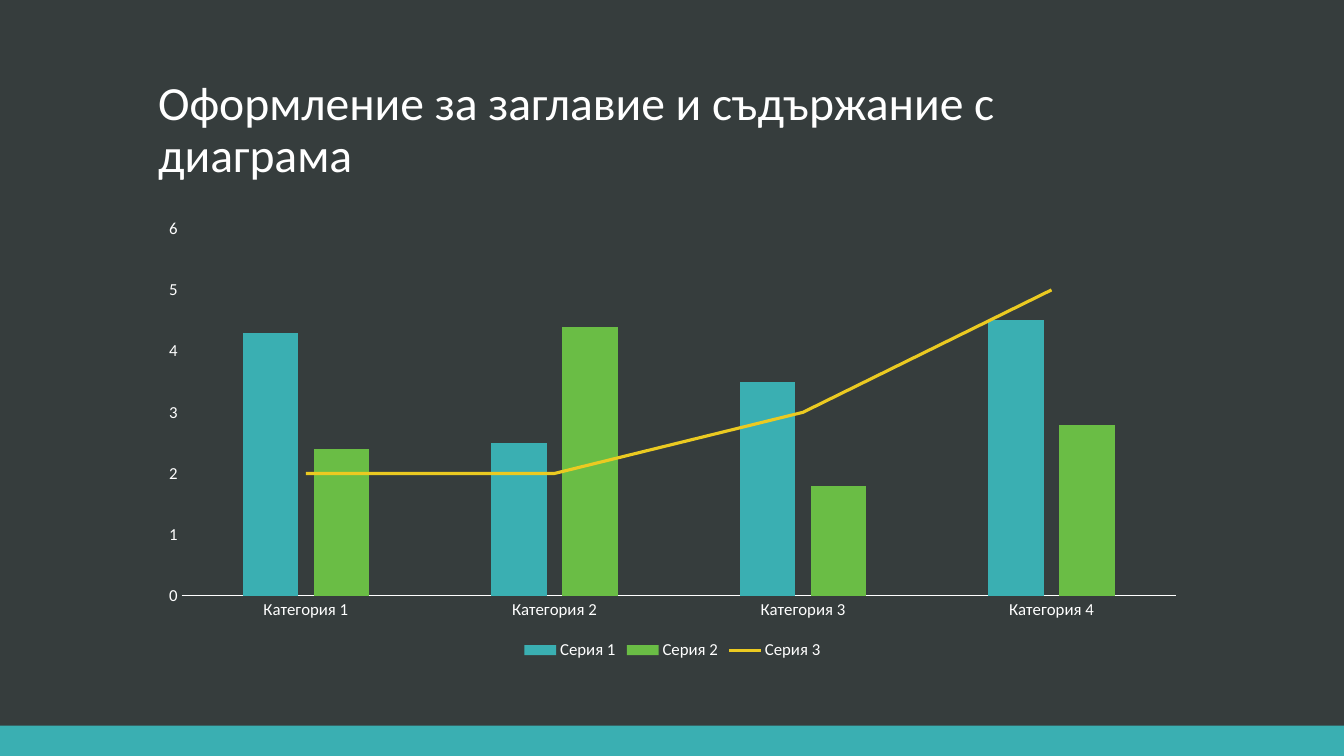
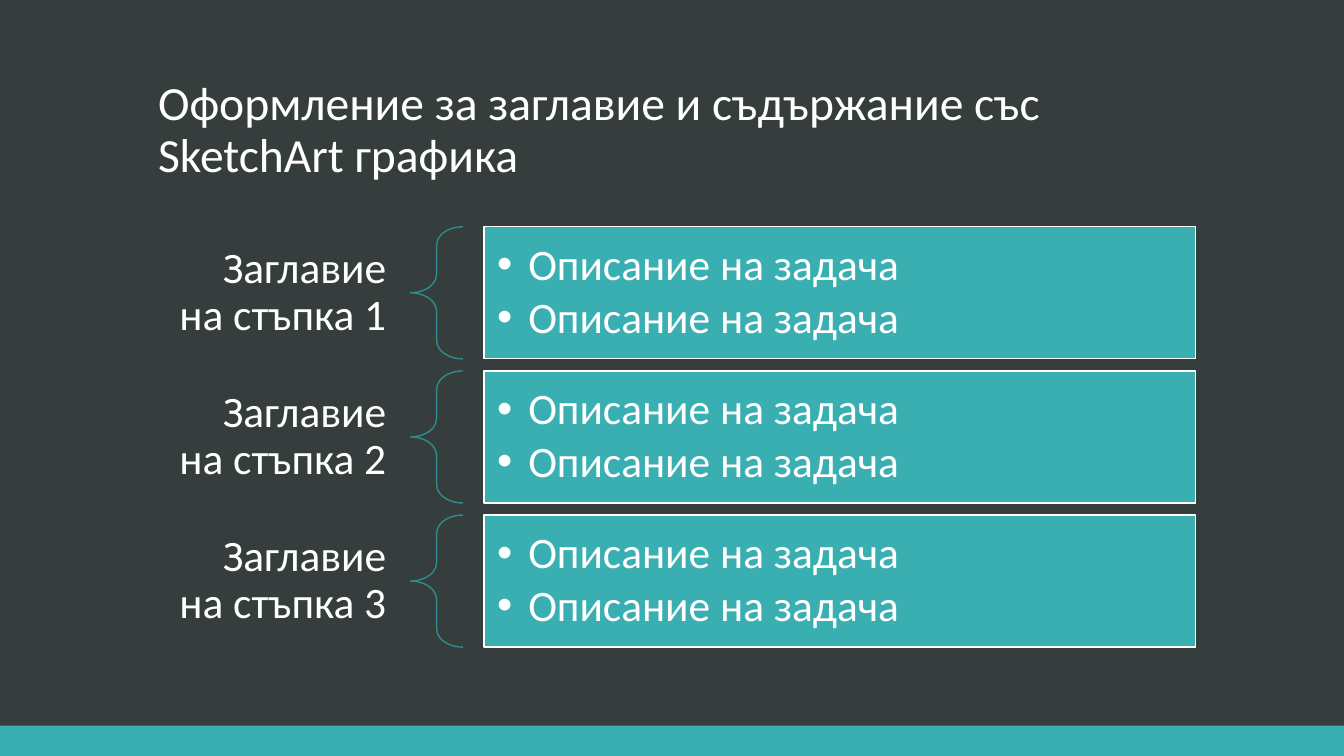
from collections import namedtuple

from lxml import etree
from pptx import Presentation
from pptx.chart.data import CategoryChartData
from pptx.dml.color import RGBColor
from pptx.enum.chart import XL_CHART_TYPE, XL_LEGEND_POSITION, XL_TICK_MARK
from pptx.enum.shapes import MSO_SHAPE
from pptx.enum.text import MSO_ANCHOR, PP_ALIGN
from pptx.oxml.ns import qn
from pptx.util import Inches, Pt

COLUMNS = XL_CHART_TYPE.COLUMN_CLUSTERED
LEGEND_BOTTOM = XL_LEGEND_POSITION.BOTTOM
NO_TICK = XL_TICK_MARK.NONE
RECTANGLE, LEFT_BRACE = MSO_SHAPE.RECTANGLE, MSO_SHAPE.LEFT_BRACE
MIDDLE, BOTTOM = MSO_ANCHOR.MIDDLE, MSO_ANCHOR.BOTTOM
LEFT, RIGHT = PP_ALIGN.LEFT, PP_ALIGN.RIGHT

SLATE = RGBColor(0x36, 0x3D, 0x3D)
TEAL = RGBColor(0x3A, 0xAF, 0xB2)
DARK_TEAL = RGBColor(0x2E, 0x8C, 0x8F)
GREEN = RGBColor(0x6A, 0xBD, 0x45)
YELLOW = RGBColor(0xEB, 0xCA, 0x21)
WHITE = RGBColor(0xFF, 0xFF, 0xFF)
FONT = "Calibri"

Box = namedtuple("Box", "left top width height")
SLIDE = Box(0, 0, 13.33, 7.5)
BAND = Box(0, 7.2, 13.33, 0.3)
TITLE = Box(1.47, 0.51, 10.4, 1.35)
CHART = Box(1.47, 2.08, 10.4, 4.51)
STEPS = Box(1.47, 2.25, 10.39, 4.17)

CATEGORIES = [f"Категория {number}" for number in range(1, 5)]
SERIES = [
    ("Серия 1", (4.3, 2.5, 3.5, 4.5), TEAL),
    ("Серия 2", (2.4, 4.4, 1.8, 2.8), GREEN),
    ("Серия 3", (2, 2, 3, 5), YELLOW),
]
STEP_TASKS = [
    (f"Заглавие на стъпка {number}", ["Описание на задача"] * 2)
    for number in range(1, 4)
]


def inches(box):
    return [Inches(length) for length in box]


def style_font(font, size):
    font.name = FONT
    font.size = Pt(size)
    font.color.rgb = WHITE


def write(frame, lines, size, anchor, align=LEFT, insets=(0.1, 0.05), after=0):
    frame.word_wrap = True
    frame.vertical_anchor = anchor
    frame.margin_left = frame.margin_right = Inches(insets[0])
    frame.margin_top = frame.margin_bottom = Inches(insets[1])
    for index, line in enumerate(lines):
        paragraph = frame.paragraphs[0] if index == 0 else frame.add_paragraph()
        paragraph.text = line
        paragraph.alignment = align
        paragraph.line_spacing = 0.9
        paragraph.space_after = Pt(after)
        style_font(paragraph.font, size)


def add_bullets(frame, indent):
    for paragraph in frame.paragraphs:
        properties = paragraph._p.get_or_add_pPr()
        properties.set("marL", str(Inches(indent)))
        properties.set("indent", str(-Inches(indent)))
        etree.SubElement(properties, qn("a:buFont")).set("typeface", "Arial")
        etree.SubElement(properties, qn("a:buChar")).set("char", "•")


def add_outline(slide, kind, box, fill=None, line=None):
    shape = slide.shapes.add_shape(kind, *inches(box))
    shape.shadow.inherit = False
    if fill is None:
        shape.fill.background()
    else:
        shape.fill.solid()
        shape.fill.fore_color.rgb = fill
    if line is None:
        shape.line.fill.background()
    else:
        shape.line.color.rgb = line
        shape.line.width = Pt(1)
    return shape


def add_titled_slide(deck, title):
    slide = deck.slides.add_slide(deck.slide_layouts[6])
    add_outline(slide, RECTANGLE, BAND, fill=TEAL)
    heading = slide.shapes.add_textbox(*inches(TITLE))
    write(heading.text_frame, [title], 34, BOTTOM)
    return slide


def move_last_series_to_line(chart):
    bars = chart._chartSpace.find(".//" + qn("c:barChart"))
    series = bars.findall(qn("c:ser"))[-1]
    for tag in ("c:invertIfNegative",):
        for element in series.findall(qn(tag)):
            series.remove(element)
    lines = etree.Element(qn("c:lineChart"))
    etree.SubElement(lines, qn("c:grouping")).set("val", "standard")
    etree.SubElement(lines, qn("c:varyColors")).set("val", "0")
    lines.append(series)
    etree.SubElement(lines, qn("c:marker")).set("val", "1")
    for axis in bars.findall(qn("c:axId")):
        etree.SubElement(lines, qn("c:axId")).set("val", axis.get("val"))
    marker = etree.Element(qn("c:marker"))
    etree.SubElement(marker, qn("c:symbol")).set("val", "none")
    series.find(qn("c:cat")).addprevious(marker)
    etree.SubElement(series, qn("c:smooth")).set("val", "0")
    bars.addnext(lines)


def add_combined_chart(slide, box):
    data = CategoryChartData()
    data.categories = CATEGORIES
    for name, values, _ in SERIES:
        data.add_series(name, values)
    chart = slide.shapes.add_chart(COLUMNS, *inches(box), data).chart
    style_font(chart.font, 12)
    chart.has_title = False
    chart.has_legend = True
    chart.legend.position = LEGEND_BOTTOM
    chart.legend.include_in_layout = False
    style_font(chart.legend.font, 12)

    columns = chart.plots[0]
    columns.gap_width = 219
    columns.overlap = -27
    columns.vary_by_categories = False
    *column_series, trend = columns.series
    for series, (_, _, color) in zip(column_series, SERIES):
        series.format.fill.solid()
        series.format.fill.fore_color.rgb = color
    trend.format.line.color.rgb = SERIES[-1][2]
    trend.format.line.width = Pt(2.25)
    move_last_series_to_line(chart)

    for axis in (chart.category_axis, chart.value_axis):
        axis.has_major_gridlines = False
        axis.major_tick_mark = axis.minor_tick_mark = NO_TICK
        style_font(axis.tick_labels.font, 12)
    chart.category_axis.format.line.color.rgb = WHITE
    chart.category_axis.format.line.width = Pt(0.75)
    values_axis = chart.value_axis
    values_axis.format.line.fill.background()
    values_axis.minimum_scale, values_axis.maximum_scale = 0, 6
    values_axis.major_unit = 1


def add_step(slide, box, heading, tasks):
    label_width, brace_width, gap, label_inset = 2.6, 0.52, 0.21, 0.09
    brace_left = box.left + label_width
    tasks_left = brace_left + brace_width + gap

    label = slide.shapes.add_textbox(*inches(Box(
        box.left, box.top + label_inset, label_width, box.height - 2 * label_inset)))
    write(label.text_frame, [heading], 31, MIDDLE, RIGHT, (0.24, 0.09))

    brace = add_outline(slide, LEFT_BRACE, Box(
        brace_left, box.top, brace_width, box.height), line=DARK_TEAL)
    brace.adjustments[0] = 0.35
    brace.adjustments[1] = 0.5

    panel = add_outline(slide, RECTANGLE, Box(
        tasks_left, box.top, box.left + box.width - tasks_left, box.height),
        fill=TEAL, line=WHITE)
    write(panel.text_frame, tasks, 31, MIDDLE, insets=(0.13, 0.13), after=4)
    add_bullets(panel.text_frame, 0.31)


def add_steps(slide, box):
    gap = 0.12
    height = (box.height - gap * (len(STEP_TASKS) - 1)) / len(STEP_TASKS)
    for index, (heading, tasks) in enumerate(STEP_TASKS):
        top = box.top + index * (height + gap)
        add_step(slide, Box(box.left, top, box.width, height), heading, tasks)


def main():
    deck = Presentation()
    deck.slide_width, deck.slide_height = Inches(SLIDE.width), Inches(SLIDE.height)
    backdrop = deck.slide_master.background.fill
    backdrop.solid()
    backdrop.fore_color.rgb = SLATE

    chart_slide = add_titled_slide(
        deck, "Оформление за заглавие и съдържание с диаграма")
    add_combined_chart(chart_slide, CHART)
    steps_slide = add_titled_slide(
        deck, "Оформление за заглавие и съдържание със SketchArt графика")
    add_steps(steps_slide, STEPS)
    deck.save("out.pptx")


if __name__ == "__main__":
    main()
